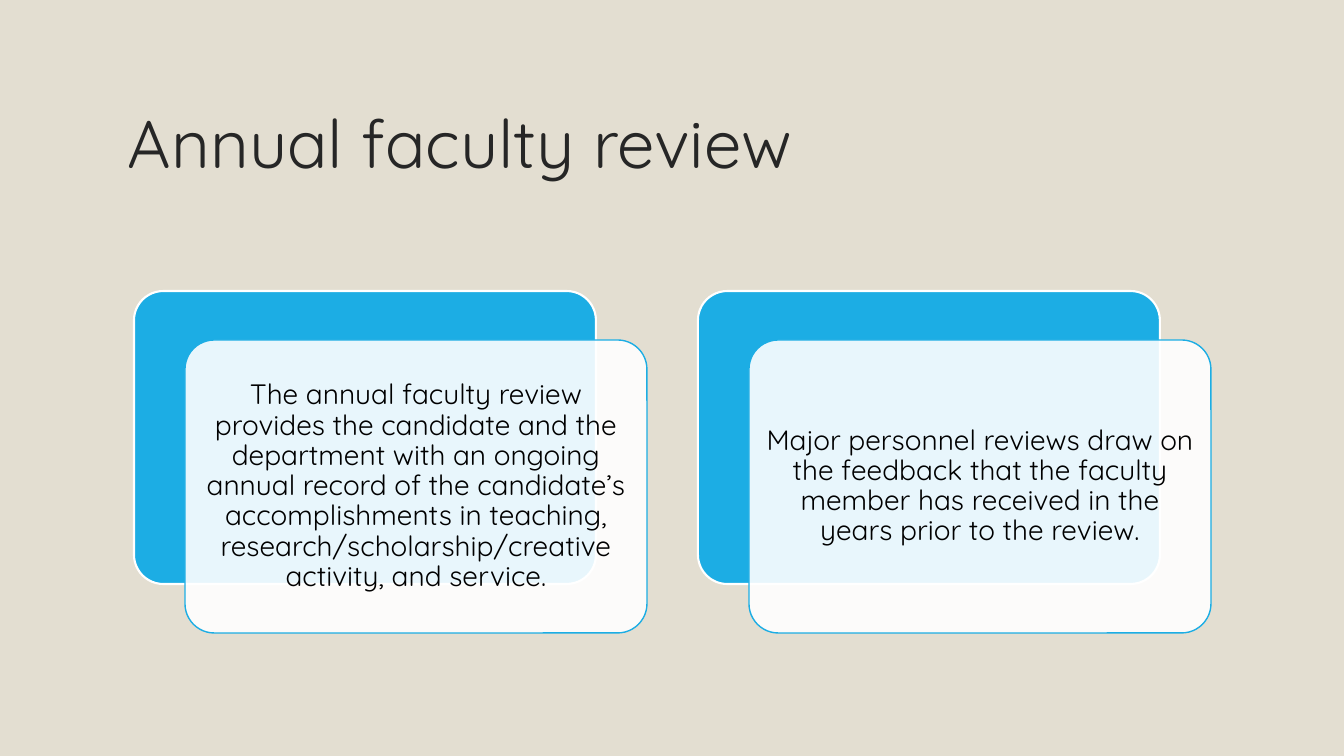
"""Build the annual faculty review slide with two layered text cards."""
from dataclasses import dataclass

import lxml.etree
import pptx
import pptx.dml.color
import pptx.enum.shapes
import pptx.enum.text
import pptx.oxml.ns
import pptx.shapes.autoshape
import pptx.slide
import pptx.text.text
import pptx.util

RGBColor = pptx.dml.color.RGBColor
SAND = RGBColor(0xE3, 0xDE, 0xD1)
BLUE = RGBColor(0x1C, 0xAD, 0xE4)
WHITE = RGBColor(0xFF, 0xFF, 0xFF)
CHARCOAL = RGBColor(0x26, 0x26, 0x26)
BLACK = RGBColor(0x00, 0x00, 0x00)

FONT = "Quicksand"
SLIDE_WIDTH, SLIDE_HEIGHT = 1344, 756
CARD_WIDTH, CARD_HEIGHT = 462, 293
CARD_LEFT, CARD_TOP, CARD_PITCH = 134, 291, 564
FRONT_DX, FRONT_DY = 51, 49


@dataclass(frozen=True)
class Panel:
    """Look of one rounded layer of a card."""

    dx: int
    dy: int
    fill: RGBColor
    line: RGBColor
    line_width: float
    opacity: int = 100


BACK = Panel(0, 0, BLUE, WHITE, 1.5)
FRONT = Panel(FRONT_DX, FRONT_DY, WHITE, BLUE, 1, opacity=90)
REVIEW_POINTS = (
    "The annual faculty review provides the candidate and the department with an "
    "ongoing annual record of the candidate’s accomplishments in teaching, "
    "research/scholarship/creative activity, and service.",
    "Major personnel reviews draw on the feedback that the faculty member has "
    "received in the years prior to the review.",
)


def px(length: int) -> pptx.util.Emu:
    """Turn whole pixels into EMU."""
    return pptx.util.Emu(round(length * 914400 / 100.8))


def write_text(frame: pptx.text.text.TextFrame, text: str, *, size: int,
               color: RGBColor, align: pptx.enum.text.PP_ALIGN, inset: int) -> None:
    """Write one formatted paragraph, centred vertically."""
    frame.word_wrap = True
    frame.auto_size = pptx.enum.text.MSO_AUTO_SIZE.NONE
    frame.vertical_anchor = pptx.enum.text.MSO_ANCHOR.MIDDLE
    frame.margin_left = frame.margin_right = px(inset)
    frame.margin_top = frame.margin_bottom = px(inset)
    paragraph = frame.paragraphs[0]
    paragraph.alignment = align
    paragraph.line_spacing = 0.9
    run = paragraph.add_run()
    run.text = text
    run.font.name = FONT
    run.font.size = pptx.util.Pt(size)
    run.font.color.rgb = color


def add_panel(slide: pptx.slide.Slide, panel: Panel,
              card_left: int) -> pptx.shapes.autoshape.Shape:
    """Draw one rounded layer of the card starting at card_left."""
    layer = slide.shapes.add_shape(
        pptx.enum.shapes.MSO_SHAPE.ROUNDED_RECTANGLE,
        px(card_left + panel.dx), px(CARD_TOP + panel.dy),
        px(CARD_WIDTH), px(CARD_HEIGHT))
    layer.adjustments[0] = 0.1
    layer.shadow.inherit = False
    layer.fill.solid()
    layer.fill.fore_color.rgb = panel.fill
    layer.line.color.rgb = panel.line
    layer.line.width = pptx.util.Pt(panel.line_width)
    if panel.opacity < 100:
        qn = pptx.oxml.ns.qn
        fill_color = layer.fill._xPr.find(qn("a:solidFill")).find(qn("a:srgbClr"))
        lxml.etree.SubElement(fill_color, qn("a:alpha"), val=str(panel.opacity * 1000))
    return layer


def main() -> None:
    """Assemble and save the slide."""
    presentation = pptx.Presentation()
    presentation.slide_width = px(SLIDE_WIDTH)
    presentation.slide_height = px(SLIDE_HEIGHT)
    slide = presentation.slides.add_slide(presentation.slide_layouts[5])
    slide.background.fill.solid()
    slide.background.fill.fore_color.rgb = SAND

    heading = slide.shapes.title
    heading.left, heading.top = px(118), px(71)
    heading.width, heading.height = px(1109), px(151)
    write_text(heading.text_frame, "Annual faculty review", size=48, color=CHARCOAL,
               align=pptx.enum.text.PP_ALIGN.LEFT, inset=10)

    for index, point in enumerate(REVIEW_POINTS):
        card_left = CARD_LEFT + index * CARD_PITCH
        add_panel(slide, BACK, card_left)
        front = add_panel(slide, FRONT, card_left)
        write_text(front.text_frame, point, size=20, color=BLACK,
                   align=pptx.enum.text.PP_ALIGN.CENTER, inset=8)

    presentation.save("out.pptx")


if __name__ == "__main__":
    main()
